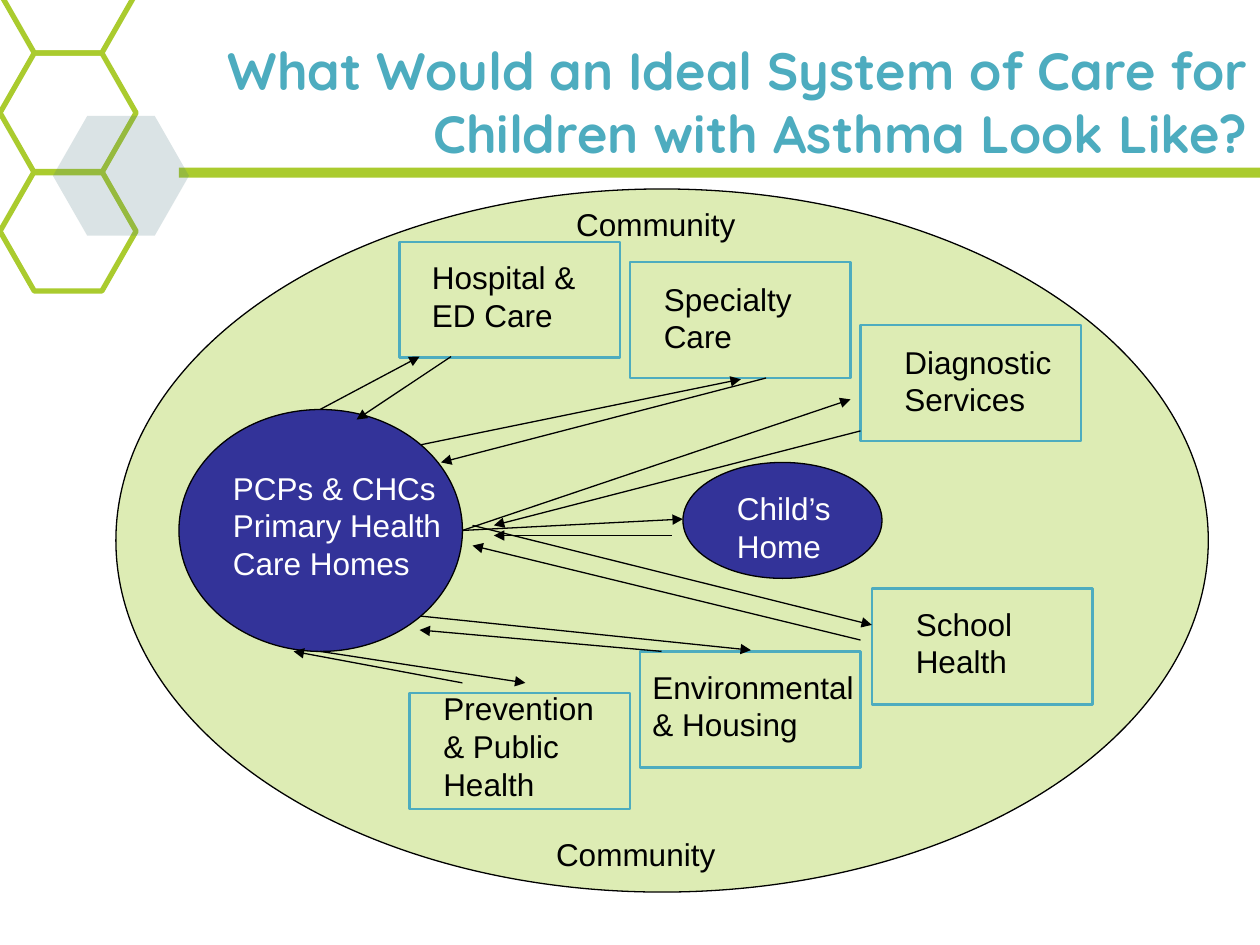
from dataclasses import dataclass
from lxml.etree import SubElement
from pptx import Presentation
from pptx.dml.color import RGBColor
from pptx.enum.shapes import MSO_CONNECTOR, MSO_SHAPE
from pptx.enum.text import PP_ALIGN
from pptx.oxml.ns import qn
from pptx.util import Inches, Pt


@dataclass(frozen=True)
class Theme:
    lime: str = "AACB2E"
    slate: str = "49767F"
    pale: str = "DDECB4"
    navy: str = "333399"
    teal: str = "4DACBF"
    black: str = "000000"
    white: str = "FFFFFF"
    font: str = "Arial"
    head: str = "Quicksand"
    body: int = 18
    title: int = 30
    thin: float = 0.75
    mid: float = 1.5
    thick: float = 3


class Board:
    """Draws styled elements on the current slide."""

    def __init__(self, slide, theme):
        self.slide = slide
        self.theme = theme

    def shape(self, kind, spot, fill=None, line=None, width=0, alpha=None):
        item = self.slide.shapes.add_shape(kind, *map(Inches, spot))
        item.shadow.inherit = False
        if fill:
            item.fill.solid()
            item.fill.fore_color.rgb = RGBColor.from_string(fill)
        else:
            item.fill.background()
        if line:
            item.line.color.rgb = RGBColor.from_string(line)
            item.line.width = Pt(width)
        else:
            item.line.fill.background()
        if alpha:
            color = item.fill._xPr.find(qn("a:solidFill"))[0]
            SubElement(color, qn("a:alpha"), val=str(alpha * 1000))
        return item

    def hexagon(self, left, top, **style):
        item = self.shape(MSO_SHAPE.HEXAGON, (left, top, 1.08, 0.95), **style)
        item.rotation = 180
        item.adjustments[0] = 0.286

    def oval(self, spot, fill):
        self.shape(MSO_SHAPE.OVAL, spot, fill, self.theme.black, self.theme.thin)

    def box(self, left, top):
        self.shape(MSO_SHAPE.RECTANGLE, (left, top, 1.75, 0.92),
                   line=self.theme.teal, width=self.theme.mid)

    def label(self, text, spot, color, align=PP_ALIGN.LEFT, font=None, size=None, bold=False):
        frame = self.slide.shapes.add_textbox(*map(Inches, spot)).text_frame
        frame.word_wrap = True
        frame.text = text
        para = frame.paragraphs[0]
        para.alignment = align
        for run in para.runs:
            run.font.name = font or self.theme.font
            run.font.size = Pt(size or self.theme.body)
            run.font.bold = bold
            run.font.color.rgb = RGBColor.from_string(color)

    def arrow(self, start, end):
        item = self.slide.shapes.add_connector(
            MSO_CONNECTOR.STRAIGHT, *map(Inches, start + end))
        item.line.color.rgb = RGBColor.from_string(self.theme.black)
        item.line.width = Pt(self.theme.thin)
        SubElement(item.line._get_or_add_ln(), qn("a:tailEnd"), type="triangle")
        SubElement(item._element.spPr, qn("a:effectLst"))


CARE = [
    ("Hospital & ED Care", (3.17, 1.92), (3.33, 2, 1.5, 0.7)),
    ("Specialty Care", (5, 2.08), (5.17, 2.17, 1.33, 0.7)),
    ("Diagnostic Services", (6.83, 2.58), (7.08, 2.67, 1.5, 0.7)),
    ("School Health", (6.92, 4.67), (7.17, 4.75, 1.33, 0.7)),
    ("Environmental & Housing", (5.08, 5.17), (5.08, 5.25, 1.83, 0.7)),
    ("Prevention & Public Health", (3.25, 5.5), (3.42, 5.42, 1.5, 1)),
]
HOMES = [
    ("PCPs & CHCs Primary Health Care Homes", (1.42, 3.25, 2.25, 1.92), (1.75, 3.67, 2, 1)),
    ("Child’s\vHome", (5.42, 3.67, 1.58, 0.92), (5.75, 3.83, 1, 0.7)),
]
LINKS = [
    ((2.54, 3.25), (3.33, 2.83)), ((3.58, 2.83), (2.83, 3.33)),
    ((3.34, 3.53), (5.88, 3.01)), ((6.08, 3), (3.5, 3.67)),
    ((3.67, 4.21), (6.75, 3.17)), ((6.83, 3.42), (3.92, 4.17)),
    ((3.67, 4.21), (5.42, 4.12)), ((5.33, 4.25), (3.92, 4.25)),
    ((3.75, 4.17), (6.92, 4.96)), ((6.83, 5.08), (3.75, 4.33)),
    ((3.34, 4.89), (5.96, 5.16)), ((5.25, 5.17), (3.33, 5)),
    ((2.54, 5.17), (4.17, 5.42)), ((3.67, 5.42), (2.33, 5.17)),
]


def main():
    deck = Presentation()
    deck.slide_width, deck.slide_height = Inches(10), Inches(7.5)
    theme = Theme()
    board = Board(deck.slides.add_slide(deck.slide_layouts[6]), theme)

    for top in (-0.53, 0.42, 1.36):
        board.hexagon(0, top, line=theme.lime, width=theme.thick)
    board.shape(MSO_SHAPE.RECTANGLE, (1.42, 1.33, 8.75, 0.08), theme.lime)
    board.hexagon(0.42, 0.92, fill=theme.slate, alpha=20)

    board.oval((0.92, 1.5, 8.67, 5.58), theme.pale)
    for left, top in ((4.08, 1.58), (3.92, 6.58)):
        board.label("Community", (left, top, 2.25, 0.4), theme.black, PP_ALIGN.CENTER)
    for text, corner, spot in CARE:
        board.box(*corner)
        board.label(text, spot, theme.black)
    for text, oval, spot in HOMES:
        board.oval(oval, theme.navy)
        board.label(text, spot, theme.white)
    for start, end in LINKS:
        board.arrow(start, end)

    board.label("What Would an Ideal System of Care for Children with Asthma Look Like?",
                (0.75, 0.25, 9.25, 1.1), theme.teal, PP_ALIGN.RIGHT,
                theme.head, theme.title, True)
    deck.save("out.pptx")


if __name__ == "__main__":
    main()
